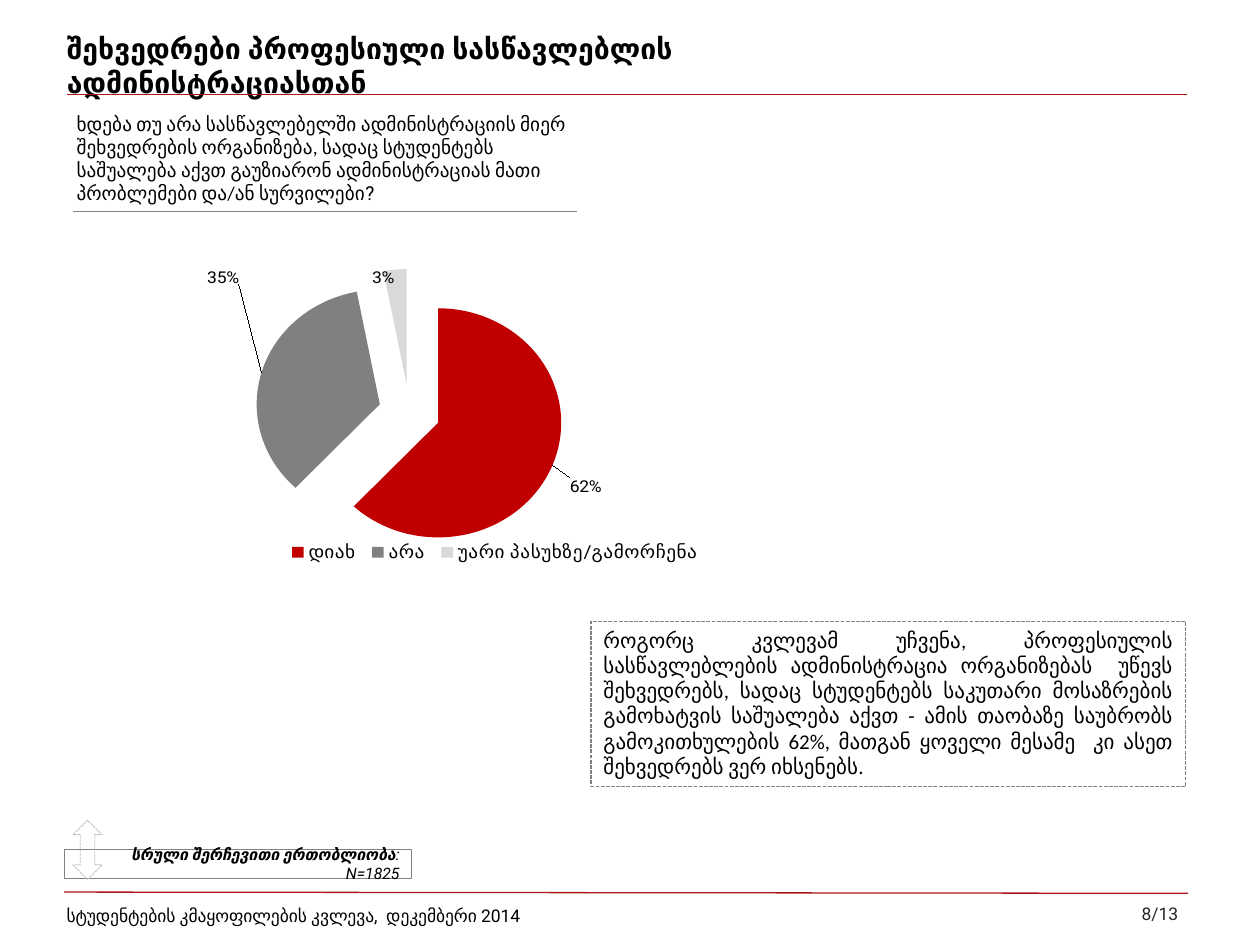
import dataclasses
from typing import Optional

import lxml.etree
import pptx
import pptx.chart.data
import pptx.dml.color
import pptx.enum.chart
import pptx.enum.dml
import pptx.enum.shapes
import pptx.enum.text
import pptx.oxml.ns
import pptx.util

Inches, Pt = pptx.util.Inches, pptx.util.Pt
qn = pptx.oxml.ns.qn
Align = pptx.enum.text.PP_ALIGN
Anchor = pptx.enum.text.MSO_ANCHOR
Fit = pptx.enum.text.MSO_AUTO_SIZE
Preset = pptx.enum.shapes.MSO_SHAPE


@dataclasses.dataclass(frozen=True)
class Theme:
    text: str = "000000"
    page: str = "262626"
    rule: str = "AC161B"
    grey: str = "808080"
    pale: str = "BFBFBF"
    slices: tuple = ("C00000", "808080", "D9D9D9")
    main_font: str = "Roboto"
    body_font: str = "Calibri"
    title_size: float = 16.2
    body_size: float = 12
    question_size: float = 11
    small_size: float = 10
    base_size: float = 9


@dataclasses.dataclass(frozen=True)
class Words:
    text: str
    size: float
    font: str
    color: str = "000000"
    bold: bool = False
    italic: bool = False


@dataclasses.dataclass(frozen=True)
class Box:
    place: tuple
    words: tuple = ()
    align: Optional[Align] = None
    anchor: Anchor = Anchor.MIDDLE
    fit: Fit = Fit.NONE
    preset: Optional[Preset] = None
    line: str = "808080"
    width: float = 0.5
    dashed: bool = False


@dataclasses.dataclass(frozen=True)
class Rule:
    start: tuple
    end: tuple
    color: str


@dataclasses.dataclass(frozen=True)
class Slice:
    name: str
    value: float
    color: str
    label_shift: tuple


THEME = Theme()


def rgb(color: str) -> pptx.dml.color.RGBColor:
    return pptx.dml.color.RGBColor.from_string(color)


def write(frame, box: Box) -> None:
    frame.word_wrap = True
    frame.auto_size = box.fit
    frame.vertical_anchor = box.anchor
    paragraph = frame.paragraphs[0]
    paragraph.alignment = box.align or Align.LEFT
    for words in box.words:
        run = paragraph.add_run()
        run.text = words.text
        run.font.size = Pt(words.size)
        run.font.name = words.font
        run.font.bold = words.bold
        run.font.italic = words.italic
        run.font.color.rgb = rgb(words.color)


def draw_box(slide, box: Box) -> None:
    place = [Inches(length) for length in box.place]
    if box.preset is None:
        shape = slide.shapes.add_textbox(*place)
    else:
        shape = slide.shapes.add_shape(box.preset, *place)
        shape.shadow.inherit = False
        shape.fill.background()
        shape.line.color.rgb = rgb(box.line)
        shape.line.width = Pt(box.width)
        if box.dashed:
            shape.line.dash_style = pptx.enum.dml.MSO_LINE.SQUARE_DOT
    if box.words:
        write(shape.text_frame, box)


def draw_rule(slide, rule: Rule) -> None:
    ends = [Inches(length) for length in rule.start + rule.end]
    line = slide.shapes.add_connector(pptx.enum.shapes.MSO_CONNECTOR.STRAIGHT, *ends)
    line.line.color.rgb = rgb(rule.color)
    line.line.width = Pt(0.75)
    lxml.etree.SubElement(line._element.spPr, qn("a:effectLst"))


def set_layout(parent, index: int, **values) -> None:
    """Give a chart part a manual layout, as fractions of the chart."""
    old = parent.find(qn("c:layout"))
    if old is not None:
        parent.remove(old)
    layout = parent.makeelement(qn("c:layout"), {})
    manual = lxml.etree.SubElement(layout, qn("c:manualLayout"))
    for tag, value in values.items():
        lxml.etree.SubElement(manual, qn("c:" + tag)).set("val", str(value))
    parent.insert(index, layout)


def draw_pie(slide, place: tuple, slices: list[Slice]) -> None:
    answers = pptx.chart.data.CategoryChartData(number_format="0%")
    answers.categories = [part.name for part in slices]
    answers.add_series("Series 1", [part.value for part in slices])
    chart = slide.shapes.add_chart(
        pptx.enum.chart.XL_CHART_TYPE.PIE, *[Inches(v) for v in place], answers
    ).chart
    chart.has_title = False
    chart.font.size = Pt(18)
    chart.font.name = THEME.body_font
    chart.font.color.rgb = rgb(THEME.text)
    set_layout(chart._chartSpace.chart.plotArea, 0, layoutTarget="inner",
               xMode="edge", yMode="edge", x=0.1, y=0, w=0.63, h=0.87)

    # Legend below the pie
    chart.has_legend = True
    legend = chart.legend
    legend.position = pptx.enum.chart.XL_LEGEND_POSITION.BOTTOM
    legend.include_in_layout = False
    legend.font.size = Pt(THEME.question_size)
    legend.font.name = THEME.main_font
    set_layout(legend._element, 1, xMode="edge", yMode="edge",
               x=0.17, y=0.81, w=0.82, h=0.1)

    # Slices and their labels
    outside = pptx.enum.chart.XL_LABEL_POSITION.OUTSIDE_END
    plot = chart.plots[0]
    plot.vary_by_categories = True
    series = plot.series[0]
    labels = series.data_labels
    labels.show_value = True
    labels.number_format = "0%"
    labels.number_format_is_linked = False
    labels.position = outside
    for index, part in enumerate(slices):
        point = series.points[index]
        point.format.fill.solid()
        point.format.fill.fore_color.rgb = rgb(part.color)
        point.data_label.position = outside
    for font in [labels.font] + [series.points[i].data_label.font for i in range(len(slices))]:
        font.size = Pt(THEME.small_size)
        font.name = THEME.main_font
    for label, part in zip(series._element.iter(qn("c:dLbl")), slices):
        set_layout(label, 1, x=part.label_shift[0], y=part.label_shift[1])
    explosion = series._element.makeelement(qn("c:explosion"), {"val": "25"})
    series._element.find(qn("c:dPt")).addprevious(explosion)


def main() -> None:
    t = THEME
    deck = pptx.Presentation()
    deck.slide_width, deck.slide_height = Inches(10), Inches(7.5)
    slide = deck.slides.add_slide(deck.slide_layouts[5])

    # Title
    title = slide.shapes.title
    title.left, title.top, title.width, title.height = map(Inches, (0.43, 0.29, 7.28, 0.45))
    write(title.text_frame, Box((), (Words(
        "შეხვედრები პროფესიული სასწავლებლის ადმინისტრაციასთან",
        t.title_size, t.main_font, bold=True),)))

    # Rules under the title, above the footer and under the question
    for rule in (
        Rule((0.51, 7.08), (9.43, 7.09), t.rule),
        Rule((0.53, 0.75), (9.42, 0.75), t.rule),
        Rule((0.58, 1.68), (4.58, 1.68), t.grey),
    ):
        draw_rule(slide, rule)

    # Footer, sample base, question and finding
    page = Box((7.92, 7.04, 1.53, 0.42),
               (Words("8/13", t.small_size, t.main_font, t.page),), Align.RIGHT)
    footer = Box((0.43, 7.07, 5.85, 0.4), (Words(
        "სტუდენტების კმაყოფილების კვლევა,  დეკემბერი 2014", t.small_size, t.main_font),))
    base = Box((0.51, 6.74, 2.76, 0.23), (
        Words("სრული შერჩევითი ერთობლიობა", t.base_size, t.main_font, bold=True, italic=True),
        Words(": N=1825", t.base_size, t.main_font, italic=True),
    ), Align.RIGHT, preset=Preset.RECTANGLE)
    arrow = Box((0.58, 6.51, 0.23, 0.47), preset=Preset.UP_DOWN_ARROW,
                line=t.pale, dashed=True)
    question = Box((0.51, 0.84, 4.17, 0.84), (
        Words("ხდება თუ არა სასწავლებელში ადმინისტრაციის მიერ შეხვედრების ორგანიზება, "
              "სადაც სტუდენტებს საშუალება აქვთ გაუზიარონ ადმინისტრაციას მათი პრობლემები "
              "და/ან სურვილები", t.question_size, t.body_font),
        Words("?", t.question_size, t.main_font),
    ), anchor=Anchor.TOP, fit=Fit.SHAPE_TO_FIT_TEXT)
    finding = Box((4.69, 4.93, 4.72, 1.31), (Words(
        "როგორც კვლევამ უჩვენა, პროფესიულის სასწავლებლების ადმინისტრაცია ორგანიზებას  "
        "უწევს შეხვედრებს, სადაც სტუდენტებს საკუთარი მოსაზრების გამოხატვის საშუალება "
        "აქვთ - ამის თაობაზე საუბრობს გამოკითხულების 62%, მათგან ყოველი მესამე  კი ასეთ "
        "შეხვედრებს ვერ იხსენებს. ", t.body_size, t.body_font),
    ), Align.JUSTIFY, Anchor.TOP, Fit.SHAPE_TO_FIT_TEXT, Preset.RECTANGLE,
        width=0.75, dashed=True)
    for box in (page, footer, base, arrow, question, finding):
        draw_box(slide, box)

    # Answers
    names = ("დიახ", "არა", "უარი პასუხზე/გამორჩენა")
    shifts = ((0.02, 0.03), (-0.03, -0.26), (0, 0.05))
    draw_pie(slide, (1.54, 1.94, 4.12, 2.81),
             [Slice(*part) for part in zip(names, (0.62, 0.35, 0.03), t.slices, shifts)])

    deck.save("out.pptx")


if __name__ == "__main__":
    main()
